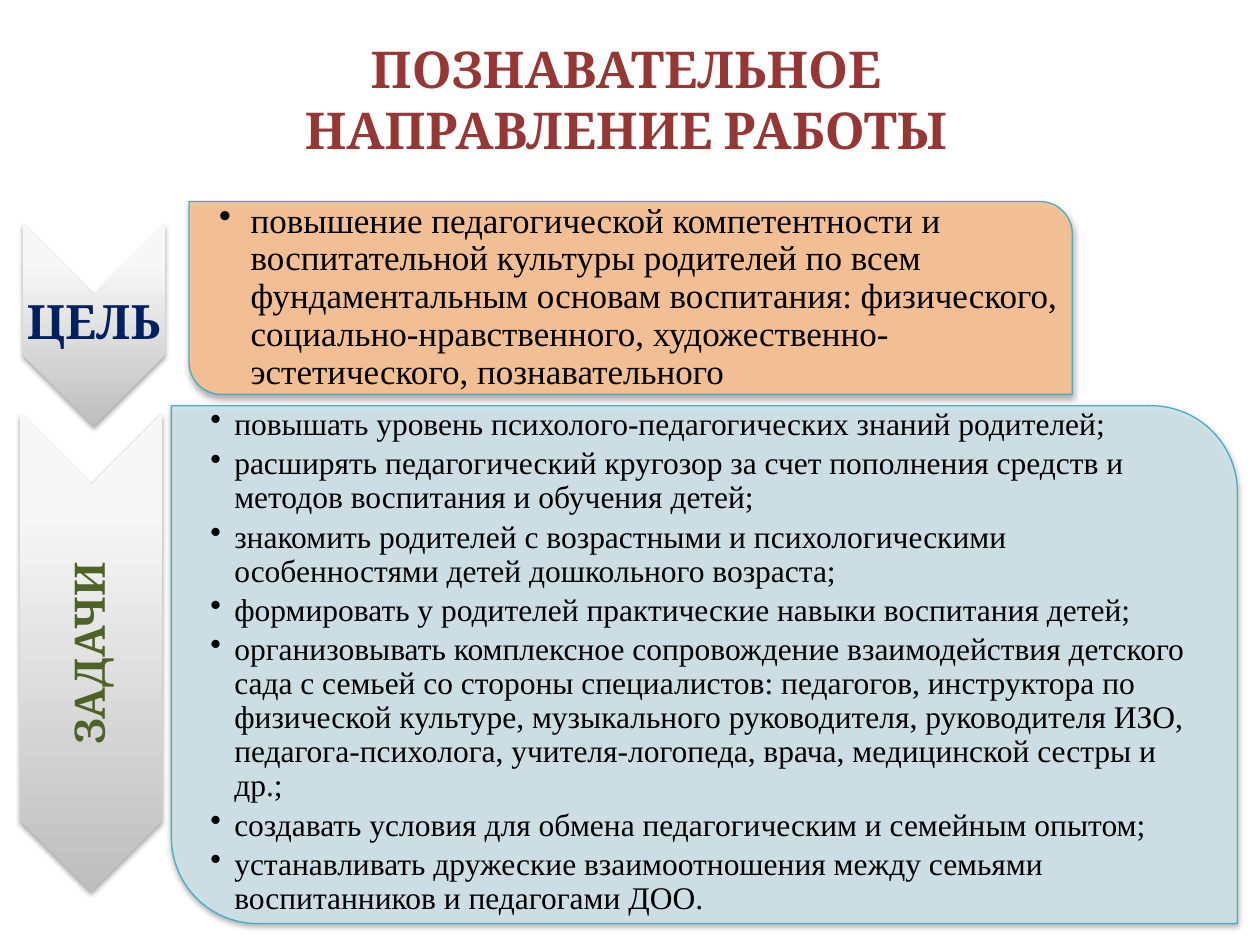
from lxml import etree
from pptx import Presentation
from pptx.dml.color import RGBColor as RGB
from pptx.enum.shapes import MSO_SHAPE as Preset
from pptx.enum.text import MSO_ANCHOR as Anchor, PP_ALIGN as Align
from pptx.oxml import parse_xml
from pptx.oxml.ns import qn
from pptx.util import Inches, Pt

COLORS = {
    "title": "953735", "goal": "002060", "tasks": "4F6228", "text": "000000",
    "peach": "FAC090", "blue": "D0E3EA", "edge": "4BACC6",
}
NS = 'xmlns:a="http://schemas.openxmlformats.org/drawingml/2006/main"'
HEAD, BODY = "Cambria", "Times New Roman"

GOAL = [
    "повышение педагогической компетентности и воспитательной культуры "
    "родителей по всем фундаментальным основам воспитания: физического, "
    "социально-нравственного, художественно-эстетического, познавательного",
]
TASKS = [
    "повышать уровень психолого-педагогических знаний родителей;",
    "расширять педагогический кругозор за счет пополнения средств и методов "
    "воспитания и обучения детей;",
    "знакомить родителей с возрастными и психологическими особенностями "
    "детей дошкольного возраста;",
    "формировать у родителей практические навыки воспитания детей;",
    "организовывать комплексное сопровождение взаимодействия детского сада "
    "с семьей со стороны специалистов: педагогов, инструктора по физической "
    "культуре, музыкального руководителя, руководителя ИЗО, "
    "педагога-психолога, учителя-логопеда, врача, медицинской сестры и др.;",
    "создавать условия для обмена педагогическим и семейным опытом;",
    "устанавливать дружеские взаимоотношения между семьями воспитанников "
    "и педагогами ДОО.",
]


def add_turned(slide, kind, left, top, width, height):
    """Add a shape turned by 90 degrees that covers the given area."""
    x, y = left + (width - height) / 2, top + (height - width) / 2
    shape = slide.shapes.add_shape(
        kind, Inches(x), Inches(y), Inches(height), Inches(width))
    shape.rotation = 90
    return shape


def add_shadow(shape):
    shape._element.spPr.append(parse_xml(
        f'<a:effectLst {NS}><a:outerShdw blurRad="{Pt(3.1)}" '
        f'dist="{Pt(1.8)}" dir="5400000" rotWithShape="0">'
        '<a:srgbClr val="000000"><a:alpha val="35000"/></a:srgbClr>'
        '</a:outerShdw></a:effectLst>'))


def add_chevron(slide, *area):
    shape = add_turned(slide, Preset.CHEVRON, *area)
    shape.line.fill.background()
    stops = "".join(
        f'<a:gs pos="{pos}000"><a:srgbClr val="{color}"/></a:gs>'
        for pos, color in ((0, "BEBEBE"), (80, "F7F7F7"), (100, "F8F8F8")))
    shape._element.spPr.find(qn("a:prstGeom")).addnext(parse_xml(
        f'<a:gradFill {NS} rotWithShape="0"><a:gsLst>{stops}</a:gsLst>'
        '<a:lin ang="16200000" scaled="0"/></a:gradFill>'))
    add_shadow(shape)


def add_panel(slide, color, *area):
    shape = add_turned(slide, Preset.ROUND_2_DIAG_RECTANGLE, *area)
    shape.fill.solid()
    shape.fill.fore_color.rgb = RGB.from_string(COLORS[color])
    tint = shape._element.spPr.find(qn("a:solidFill"))[0]
    etree.SubElement(tint, qn("a:alpha"), val="90000")
    shape.line.color.rgb = RGB.from_string(COLORS["edge"])
    shape.line.width = Pt(0.75)
    add_shadow(shape)


def add_bullet(para, indent):
    props = para._p.get_or_add_pPr()
    props.set("marL", str(Inches(indent)))
    props.set("indent", str(-Inches(indent)))
    etree.SubElement(props, qn("a:buChar"), char="•")


def add_text(slide, lines, *area, size, color, font=HEAD, bold=False,
             align=Align.CENTER, inset=0.02, pad=None, spacing=0.9,
             after=0, indent=0, vert=None, wrap=True):
    """Add a text box; pad is the left inset where it differs from inset."""
    box = slide.shapes.add_textbox(*map(Inches, area))
    frame = box.text_frame
    frame.word_wrap = wrap
    frame.vertical_anchor = Anchor.MIDDLE
    frame.margin_left = Inches(inset if pad is None else pad)
    frame.margin_right = frame.margin_top = frame.margin_bottom = Inches(inset)
    if vert:
        frame._txBody.bodyPr.set("vert", vert)
    for i, line in enumerate(lines):
        para = frame.paragraphs[0] if i == 0 else frame.add_paragraph()
        para.text = line
        if indent:
            add_bullet(para, indent)
        para.alignment = align
        para.line_spacing = spacing
        para.space_after = Pt(after)
        for run in para.runs:
            run.font.size, run.font.name, run.font.bold = Pt(size), font, bold
            run.font.color.rgb = RGB.from_string(COLORS[color])


def main():
    deck = Presentation()
    deck.slide_width, deck.slide_height = Inches(10), Inches(7.5)
    slide = deck.slides.add_slide(deck.slide_layouts[6])
    add_text(slide, ["ПОЗНАВАТЕЛЬНОЕ\vНАПРАВЛЕНИЕ РАБОТЫ"], 0.47, 0.16, 9, 1.25,
             size=29, color="title", bold=True, inset=0.05, spacing=1.0)

    body = dict(color="text", font=BODY, align=Align.LEFT, inset=0.01, after=3)
    add_chevron(slide, 0.18, 1.77, 1.13, 1.61)
    add_text(slide, ["ЦЕЛЬ"], 0.18, 2.33, 1.13, 0.48,
             size=27, color="goal", bold=True)
    add_panel(slide, "peach", 1.5, 1.6, 7.01, 1.53)
    add_text(slide, GOAL, 1.58, 1.67, 6.86, 1.38,
             size=20, pad=0.16, indent=0.25, **body)

    add_chevron(slide, 0.16, 3.28, 1.13, 3.8)
    add_text(slide, ["ЗАДАЧИ"], 0.16, 3.85, 1.13, 2.67,
             size=24, color="tasks", bold=True, vert="vert270")
    add_panel(slide, "blue", 1.36, 3.22, 8.46, 4.11)
    add_text(slide, TASKS, 1.56, 3.4, 8.06, 3.71,
             size=18, pad=0.11, indent=0.19, **body)
    deck.save("out.pptx")


if __name__ == "__main__":
    main()
